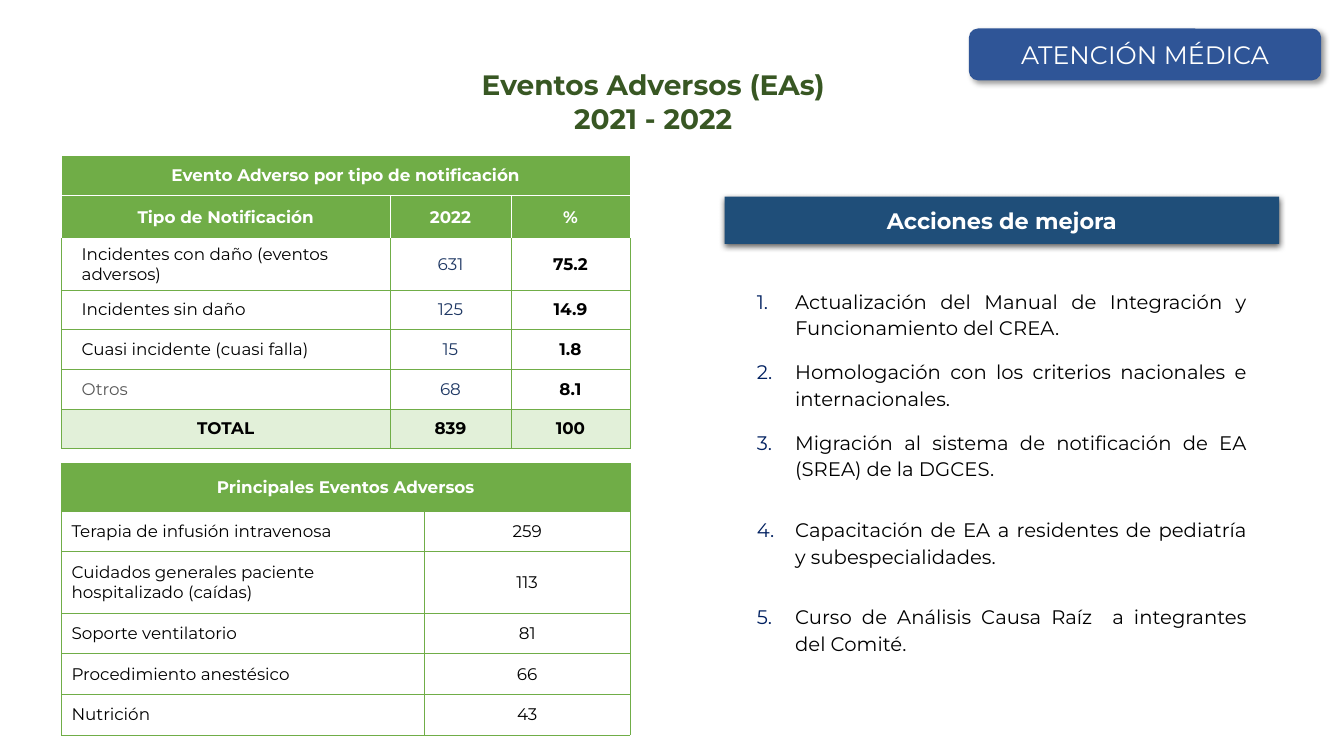
import pptx
import pptx.dml.color
import pptx.enum.shapes
import pptx.enum.text
import pptx.oxml
import pptx.oxml.ns
import pptx.util
from dataclasses import dataclass

Pt = pptx.util.Pt
ALIGN = pptx.enum.text.PP_ALIGN
ANCHOR = pptx.enum.text.MSO_ANCHOR
SHAPE = pptx.enum.shapes.MSO_SHAPE
NAMESPACE = pptx.oxml.ns.nsdecls("a")


@dataclass(frozen=True)
class Theme:
    font: str = "Montserrat"
    white: str = "FFFFFF"
    black: str = "000000"
    green: str = "70AD47"
    pale_green: str = "E2F0D9"
    dark_green: str = "385723"
    gray: str = "595959"
    navy: str = "1F3864"
    number: str = "002060"
    banner: str = "1F4E79"
    badge: str = "2F5597"
    title_size: float = 20
    badge_size: float = 18
    banner_size: float = 16
    list_size: float = 14
    table_size: float = 12


THEME = Theme()


def rgb(value):
    return pptx.dml.color.RGBColor.from_string(value)


def write_text(frame, lines, size=THEME.table_size, color=THEME.black, bold=False,
               align=ALIGN.CENTER, anchor=ANCHOR.MIDDLE, indent=0, numbered=False,
               line_spacing=None, after=0, before=()):
    """Fill a text frame; before holds the space above each paragraph."""
    frame.word_wrap = True
    frame.vertical_anchor = anchor
    for index, line in enumerate(lines):
        para = frame.paragraphs[0] if index == 0 else frame.add_paragraph()
        para.alignment = align
        para.space_after = Pt(after)
        para.space_before = Pt(before[index] if before else 0)
        if line_spacing:
            para.line_spacing = line_spacing
        properties = para._p.get_or_add_pPr()
        if indent:
            properties.set("marL", str(Pt(indent)))
            properties.set("indent", str(-Pt(indent) if numbered else 0))
        if numbered:
            properties.append(pptx.oxml.parse_xml(
                f'<a:buClr {NAMESPACE}><a:srgbClr val="{THEME.number}"/></a:buClr>'))
            properties.append(pptx.oxml.parse_xml(
                f'<a:buAutoNum {NAMESPACE} type="arabicPeriod"/>'))
        span = para.add_run()
        span.text = line
        span.font.name = THEME.font
        span.font.size = Pt(size)
        span.font.bold = bold
        span.font.color.rgb = rgb(color)


def set_margins(target, horizontal, vertical):
    target.margin_left = target.margin_right = Pt(horizontal)
    target.margin_top = target.margin_bottom = Pt(vertical)


class SlideBuilder:
    def __init__(self, page, theme):
        self.page = page
        self.theme = theme

    def shape(self, kind, place, lines, fill=None, line=None, shadow=None,
              rounding=None, **text_format):
        box = self.page.shapes.add_shape(kind, *map(Pt, place))
        box.shadow.inherit = False
        if rounding is not None:
            box.adjustments[0] = rounding
        if fill:
            box.fill.solid()
            box.fill.fore_color.rgb = rgb(fill)
        else:
            box.fill.background()
        if line:
            box.line.color.rgb = rgb(line)
            box.line.width = Pt(1)
        else:
            box.line.fill.background()
        if shadow:
            alpha, blur, distance, angle = shadow
            effects = box._element.spPr.find(pptx.oxml.ns.qn("a:effectLst"))
            effects.append(pptx.oxml.parse_xml(
                f'<a:outerShdw {NAMESPACE} blurRad="{Pt(blur)}" dist="{Pt(distance)}" '
                f'dir="{angle * 60000}" algn="tl" rotWithShape="0">'
                f'<a:srgbClr val="{self.theme.black}"><a:alpha val="{alpha * 1000}"/>'
                '</a:srgbClr></a:outerShdw>'))
        set_margins(box.text_frame, 7.2, 3.6)
        write_text(box.text_frame, lines, **text_format)

    def text(self, place, lines, **text_format):
        box = self.page.shapes.add_textbox(*map(Pt, place))
        set_margins(box.text_frame, 7.2, 7.2)
        write_text(box.text_frame, lines, **text_format)

    def border(self, cell, colors):
        properties = cell._tc.get_or_add_tcPr()
        for side, color in zip("LRTB", colors):
            properties.append(pptx.oxml.parse_xml(
                f'<a:ln{side} {NAMESPACE} w="{Pt(0.5)}"><a:solidFill>'
                f'<a:srgbClr val="{color}"/></a:solidFill></a:ln{side}>'))

    def table(self, left, top, widths, heights, rows, cell_format, margin):
        """cell_format(row, column) gives fill, border colours and text format."""
        frame = self.page.shapes.add_table(
            len(rows), len(widths), Pt(left), Pt(top), Pt(sum(widths)), Pt(sum(heights)))
        grid = frame.table
        for column, width in zip(grid.columns, widths):
            column.width = Pt(width)
        for row, height in zip(grid.rows, heights):
            row.height = Pt(height)
        grid.cell(0, 0).merge(grid.cell(0, len(widths) - 1))
        for row, values in enumerate(rows):
            for column in range(len(widths)):
                cell = grid.cell(row, column)
                fill, borders, text_format = cell_format(row, column)
                self.border(cell, borders)
                cell.fill.solid()
                cell.fill.fore_color.rgb = rgb(fill)
                set_margins(cell, 7.2, margin)
                cell.vertical_anchor = ANCHOR.MIDDLE
                if column < len(values):
                    write_text(cell.text_frame, [values[column]], anchor=None, **text_format)


NOTIFICATIONS = [
    ["Evento Adverso por tipo de notificación"],
    ["Tipo de Notificación", "2022", "%"],
    ["Incidentes con daño (eventos adversos)", "631", "75.2"],
    ["Incidentes sin daño", "125", "14.9"],
    ["Cuasi incidente (cuasi falla)", "15", "1.8"],
    ["Otros", "68", "8.1"],
    ["TOTAL", "839", "100"],
]
MAIN_EVENTS = [
    ["Principales Eventos Adversos"],
    ["Terapia de infusión intravenosa", "259"],
    ["Cuidados generales paciente hospitalizado (caídas)", "113"],
    ["Soporte ventilatorio", "81"],
    ["Procedimiento anestésico", "66"],
    ["Nutrición", "43"],
]
ACTIONS = [
    "Actualización del Manual de Integración y Funcionamiento del CREA.",
    "Homologación con los criterios nacionales e internacionales.",
    "Migración al sistema de notificación de EA (SREA) de la DGCES.",
    "Capacitación de EA a residentes de pediatría y subespecialidades.",
    "Curso de Análisis Causa Raíz  a integrantes del Comité.",
]


def notification_format(row, column):
    green, white = THEME.green, THEME.white
    if row < 2:
        return green, [white] * 4, dict(color=white, bold=True)
    borders = [green, green, white if row == 2 else green, green]
    if row == len(NOTIFICATIONS) - 1:
        return THEME.pale_green, borders, dict(bold=True)
    label_color = THEME.gray if NOTIFICATIONS[row][0] == "Otros" else THEME.black
    return white, borders, [
        dict(color=label_color, align=ALIGN.LEFT, indent=7.2),
        dict(color=THEME.navy),
        dict(bold=True),
    ][column]


def event_format(row, column):
    borders = [THEME.green] * 4
    if row == 0:
        return THEME.green, borders, dict(color=THEME.white, bold=True)
    return THEME.white, borders, dict(align=ALIGN.CENTER if column else ALIGN.LEFT)


def main():
    deck = pptx.Presentation()
    deck.slide_width, deck.slide_height = Pt(960), Pt(540)
    page = deck.slides.add_slide(deck.slide_layouts[6])
    builder = SlideBuilder(page, THEME)

    # Tables on the left
    builder.table(43.9, 331.2, [259.2, 146.9], [33.8, 29, 43.2, 29, 29, 29],
                  MAIN_EVENTS, event_format, margin=7.2)
    builder.table(43.9, 111, [234.7, 86.4, 85], [28.5, 31, 36.6] + [28.4] * 4,
                  NOTIFICATIONS, notification_format, margin=3.6)

    # Title
    builder.shape(SHAPE.ROUNDED_RECTANGLE, (240.5, 38.2, 452.2, 68.4),
                  ["Eventos Adversos (EAs)", "2021 - 2022"], rounding=0.32,
                  size=THEME.title_size, color=THEME.dark_green, bold=True, anchor=ANCHOR.TOP)

    # Improvement actions
    builder.text((533.5, 197.3, 364.3, 293), ACTIONS, size=THEME.list_size,
                 align=ALIGN.JUSTIFY, anchor=ANCHOR.TOP, indent=27.4, numbered=True,
                 line_spacing=1.14, after=12, before=(0, 0, 0, 12, 12))
    builder.shape(SHAPE.RECTANGLE, (517.7, 140.4, 396, 33.8), ["Acciones de mejora"],
                  fill=THEME.banner, shadow=(63, 4.5, 1.5, 90),
                  size=THEME.banner_size, color=THEME.white, bold=True)

    # Section badge
    builder.shape(SHAPE.ROUNDED_RECTANGLE, (692.6, 20.9, 250.6, 36), ["ATENCIÓN MÉDICA"],
                  fill=THEME.badge, line=THEME.badge, shadow=(40, 4, 3, 45),
                  size=THEME.badge_size, color=THEME.white)

    deck.save("out.pptx")


if __name__ == "__main__":
    main()
